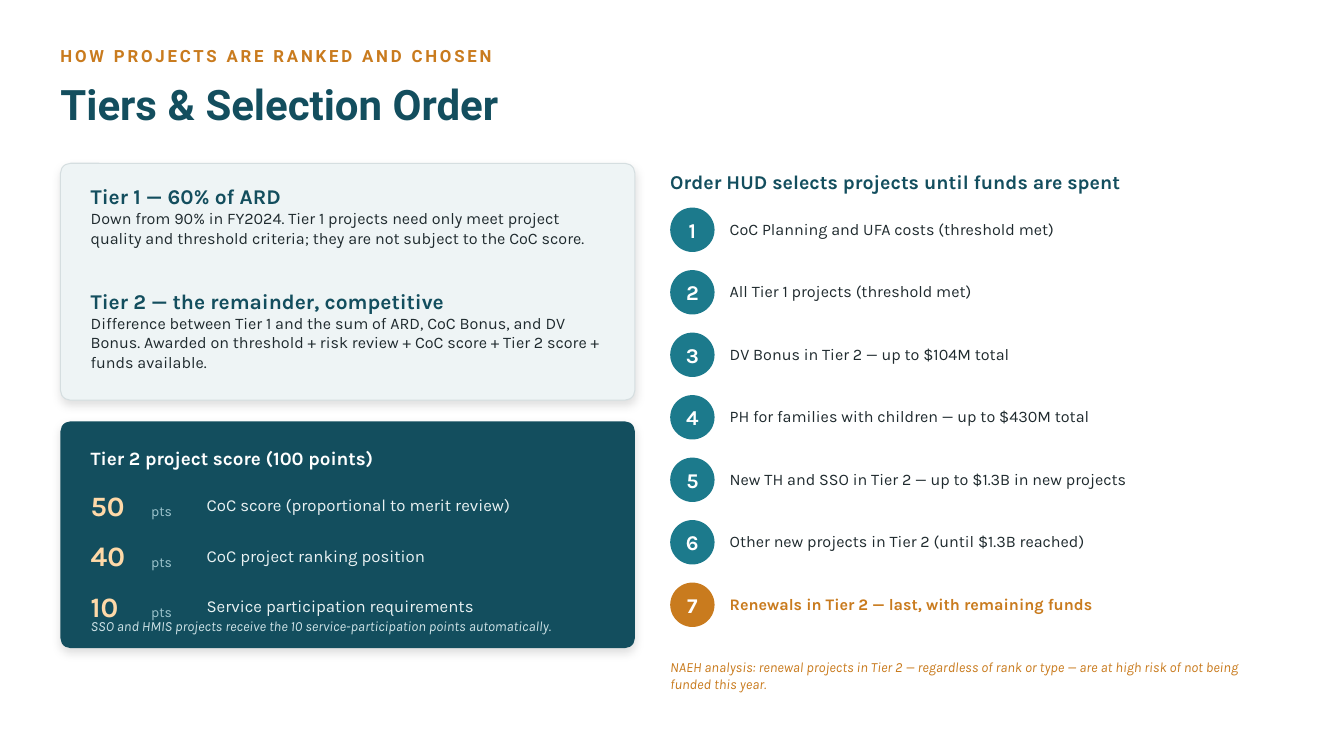
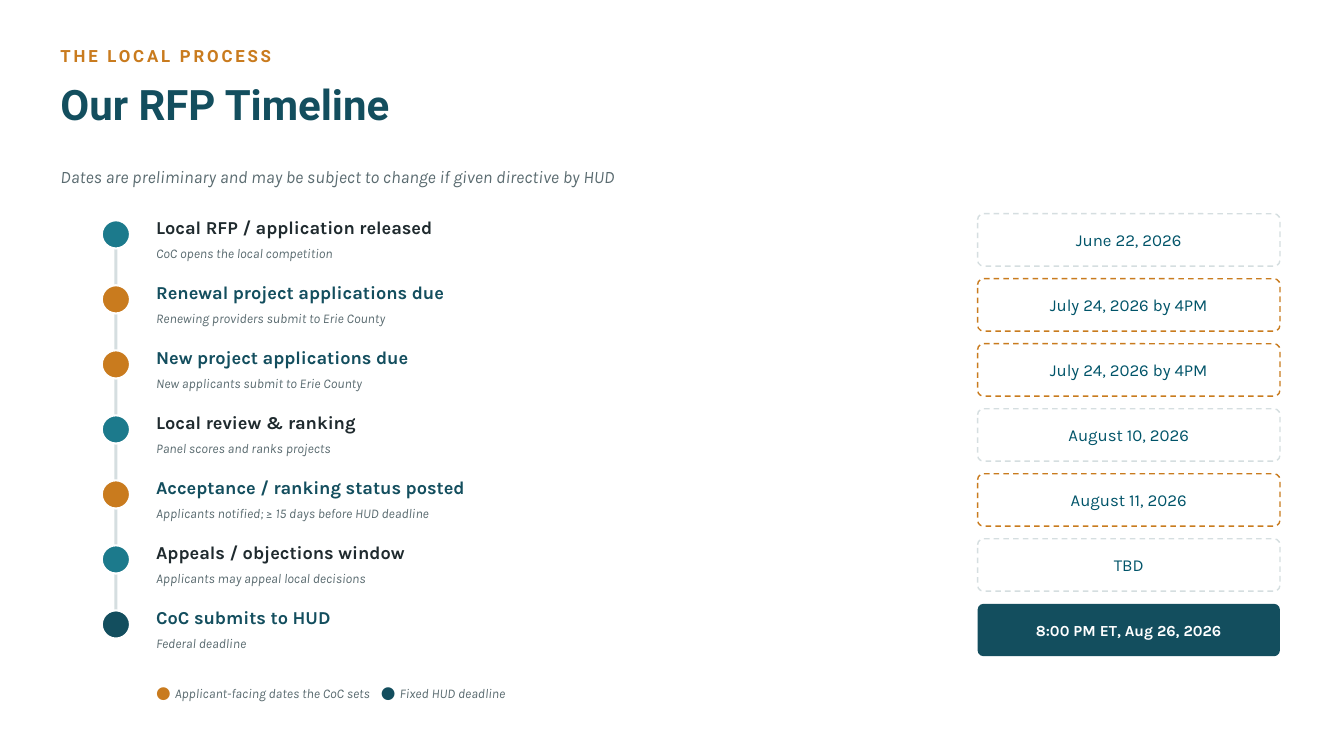
from dataclasses import dataclass, replace
from typing import NamedTuple, Optional

import lxml.etree
import pptx
import pptx.dml.color
import pptx.enum.dml
import pptx.enum.shapes
import pptx.enum.text
import pptx.oxml.ns
import pptx.util

EMU_PER_PX = 4572  # 200 px to the inch
SHAPE = pptx.enum.shapes.MSO_SHAPE
ANCHOR = pptx.enum.text.MSO_ANCHOR
ALIGN = pptx.enum.text.PP_ALIGN
qn = pptx.oxml.ns.qn


@dataclass(frozen=True)
class Theme:
    heading_font: str = "Roboto"
    body_font: str = "Karla"
    white: str = "FFFFFF"
    deep: str = "134E5E"
    teal: str = "1C7A8C"
    amber: str = "C97B1E"
    ink: str = "1F2A2E"
    muted: str = "5A6B70"
    pale: str = "EEF4F5"
    rule: str = "D5DEE0"
    date: str = "005469"
    score_points: str = "FFD9A8"
    score_unit: str = "9FC6CF"
    score_label: str = "EAF2F3"
    score_note: str = "CFE3E7"
    title_size: float = 30
    points_size: float = 20
    tier_size: float = 15
    list_heading_size: float = 14
    score_heading_size: float = 13.5
    milestone_size: float = 13
    intro_size: float = 12.5
    label_size: float = 12
    body_size: float = 11.5
    deadline_size: float = 11
    note_size: float = 10
    caption_size: float = 9.5


T = Theme()


@dataclass(frozen=True)
class TextStyle:
    size: float
    color: str
    bold: bool = False
    italic: bool = False
    font: str = T.body_font
    tracking: int = 0  # hundredths of a point


EYEBROW = TextStyle(T.label_size, T.amber, bold=True, font=T.heading_font, tracking=200)
TITLE = TextStyle(T.title_size, T.deep, bold=True, font=T.heading_font)
TIER = TextStyle(T.tier_size, T.deep, bold=True)
BODY = TextStyle(T.body_size, T.ink)
BADGE = TextStyle(T.tier_size, T.white, bold=True)
CAPTION = TextStyle(T.caption_size, T.muted, italic=True)
DATE = TextStyle(T.label_size, T.date)


class Box(NamedTuple):
    x: int
    y: int
    w: int
    h: int

    def down(self, distance: int) -> "Box":
        return self._replace(y=self.y + distance)


class Line(NamedTuple):
    text: str
    style: TextStyle


class Score(NamedTuple):
    points: str
    label: str


@dataclass(frozen=True)
class Outline:
    color: str
    width: float
    dashed: bool = False


@dataclass(frozen=True)
class MilestoneKind:
    dot: str
    title: str
    date_fill: str
    date_outline: Optional[Outline]
    date_style: TextStyle


ROUTINE = MilestoneKind(T.teal, T.ink, T.white, Outline(T.rule, 1, True), DATE)
APPLICANT = MilestoneKind(T.amber, T.deep, T.white, Outline(T.amber, 1, True), DATE)
FEDERAL = MilestoneKind(
    T.deep, T.deep, T.deep, None, TextStyle(T.deadline_size, T.white, bold=True)
)


class Milestone(NamedTuple):
    title: str
    caption: str
    date: str
    kind: MilestoneKind


TIERS = [
    (Box(180, 364, 1020, 190), "Tier 1 — 60% of ARD",
     "Down from 90% in FY2024. Tier 1 projects need only meet project quality and "
     "threshold criteria; they are not subject to the CoC score."),
    (Box(180, 572, 1020, 200), "Tier 2 — the remainder, competitive",
     "Difference between Tier 1 and the sum of ARD, CoC Bonus, and DV Bonus. Awarded on "
     "threshold + risk review + CoC score + Tier 2 score + funds available."),
]
SCORES = [
    Score("50", "CoC score (proportional to merit review)"),
    Score("40", "CoC project ranking position"),
    Score("10", "Service participation requirements"),
]
SELECTION_ORDER = [
    "CoC Planning and UFA costs (threshold met)",
    "All Tier 1 projects (threshold met)",
    "DV Bonus in Tier 2 — up to $104M total",
    "PH for families with children — up to $430M total",
    "New TH and SSO in Tier 2 — up to $1.3B in new projects",
    "Other new projects in Tier 2 (until $1.3B reached)",
    "Renewals in Tier 2 — last, with remaining funds",
]
MILESTONES = [
    Milestone("Local RFP / application released", "CoC opens the local competition",
              "June 22, 2026", ROUTINE),
    Milestone("Renewal project applications due", "Renewing providers submit to Erie County",
              "July 24, 2026 by 4PM", APPLICANT),
    Milestone("New project applications due", "New applicants submit to Erie County",
              "July 24, 2026 by 4PM", APPLICANT),
    Milestone("Local review & ranking", "Panel scores and ranks projects",
              "August 10, 2026", ROUTINE),
    Milestone("Acceptance / ranking status posted",
              "Applicants notified; ≥ 15 days before HUD deadline",
              "August 11, 2026", APPLICANT),
    Milestone("Appeals / objections window", "Applicants may appeal local decisions",
              "TBD", ROUTINE),
    Milestone("CoC submits to HUD", "Federal deadline", "8:00 PM ET, Aug 26, 2026", FEDERAL),
]


def px(length: int) -> pptx.util.Emu:
    return pptx.util.Emu(length * EMU_PER_PX)


def rgb(color: str) -> pptx.dml.color.RGBColor:
    return pptx.dml.color.RGBColor.from_string(color)


def set_font(font, style: TextStyle) -> None:
    font.name = style.font
    font.size = pptx.util.Pt(style.size)
    font.bold = style.bold
    font.italic = style.italic
    font.color.rgb = rgb(style.color)


def write(sp, lines: list[Line], align=ALIGN.LEFT, anchor=ANCHOR.MIDDLE,
          spacing: Optional[float] = None):
    """Fill a shape with one paragraph per line, without margins."""
    tf = sp.text_frame
    tf.word_wrap = True
    tf.vertical_anchor = anchor
    tf.margin_left = tf.margin_right = tf.margin_top = tf.margin_bottom = 0
    for i, line in enumerate(lines):
        p = tf.add_paragraph() if i else tf.paragraphs[0]
        p.alignment = align
        if spacing:
            p.line_spacing = spacing
        r = p.add_run()
        r.text = line.text
        set_font(p.font, line.style)
        if line.style.tracking:
            r.font._element.set("spc", str(line.style.tracking))


def add_text(s, box: Box, text: str, style: TextStyle,
             spacing: Optional[float] = None) -> None:
    write(s.shapes.add_textbox(*map(px, box)), [Line(text, style)], spacing=spacing)


def add_shape(s, kind, box: Box, fill: str, outline: Optional[Outline] = None,
              radius: Optional[float] = None):
    sp = s.shapes.add_shape(kind, *map(px, box))
    sp.shadow.inherit = False
    sp.fill.solid()
    sp.fill.fore_color.rgb = rgb(fill)
    if radius is not None:
        sp.adjustments[0] = radius
    if outline is None:
        sp.line.fill.background()
    else:
        sp.line.color.rgb = rgb(outline.color)
        sp.line.width = pptx.util.Pt(outline.width)
        if outline.dashed:
            sp.line.dash_style = pptx.enum.dml.MSO_LINE.DASH
    return sp


def add_card(s, box: Box, fill: str, outline: Optional[Outline] = None) -> None:
    """Draw a rounded panel with a soft shadow below it."""
    sp = add_shape(s, SHAPE.ROUNDED_RECTANGLE, box, fill, outline, radius=20 / box.h)
    effects = sp._element.spPr.find(qn("a:effectLst"))
    shadow = lxml.etree.SubElement(
        effects, qn("a:outerShdw"), blurRad=str(pptx.util.Pt(7)),
        dist=str(pptx.util.Pt(3)), dir="5400000", algn="bl", rotWithShape="0")
    color = lxml.etree.SubElement(shadow, qn("a:srgbClr"), val="000000")
    lxml.etree.SubElement(color, qn("a:alpha"), val="12000")


def add_titled_slide(prs, eyebrow: str, title: str):
    s = prs.slides.add_slide(prs.slide_layouts[6])
    add_text(s, Box(120, 80, 2420, 60), eyebrow, EYEBROW)
    add_text(s, Box(120, 140, 2420, 132), title, TITLE)
    return s


def add_score(s, score: Score, y: int) -> None:
    add_text(s, Box(180, y, 160, 84), score.points,
             TextStyle(T.points_size, T.score_points, bold=True))
    add_text(s, Box(300, y + 24, 100, 60), "pts", TextStyle(T.note_size, T.score_unit))
    add_text(s, Box(410, y, 800, 84), score.label, TextStyle(T.label_size, T.score_label))


def add_step(s, number: int, text: str, y: int, last: bool) -> None:
    badge = add_shape(s, SHAPE.OVAL, Box(1330, y, 88, 88), T.amber if last else T.teal)
    write(badge, [Line(str(number), BADGE)], ALIGN.CENTER)
    style = replace(BODY, color=T.amber, bold=True) if last else BODY
    add_text(s, Box(1448, y - 4, 1092, 96), text, style, spacing=0.95)


def add_milestone(s, milestone: Milestone, offset: int) -> None:
    kind = milestone.kind
    add_shape(s, SHAPE.OVAL, Box(202, 437, 56, 56).down(offset), kind.dot,
              Outline(T.white, 1.5))
    add_text(s, Box(310, 418, 1480, 64).down(offset), milestone.title,
             TextStyle(T.milestone_size, kind.title, bold=True))
    add_text(s, Box(310, 474, 1580, 56).down(offset), milestone.caption, CAPTION)
    pill = add_shape(s, SHAPE.ROUNDED_RECTANGLE, Box(1940, 424, 600, 104).down(offset),
                     kind.date_fill, kind.date_outline, radius=0.115)
    write(pill, [Line(milestone.date, kind.date_style)], ALIGN.CENTER)


def add_legend(s) -> None:
    """Put both legend entries on one line, the second at a tab stop."""
    sp = s.shapes.add_textbox(*map(px, Box(310, 1342, 1800, 60)))
    write(sp, [])
    p = sp.text_frame.paragraphs[0]
    tabs = lxml.etree.SubElement(p._p.get_or_add_pPr(), qn("a:tabLst"))
    lxml.etree.SubElement(tabs, qn("a:tab"), pos=str(px(446)), algn="l")
    for text, style in (
        ("● ", TextStyle(T.label_size, T.amber)),
        ("Applicant-facing dates the CoC sets\t", CAPTION),
        ("● ", TextStyle(T.label_size, T.deep)),
        ("Fixed HUD deadline", CAPTION),
    ):
        r = p.add_run()
        r.text = text
        set_font(r.font, style)


def build_tiers(prs) -> None:
    s = add_titled_slide(prs, "HOW PROJECTS ARE RANKED AND CHOSEN", "Tiers & Selection Order")
    add_card(s, Box(120, 324, 1140, 470), T.pale, Outline(T.rule, 0.75))
    for box, heading, body in TIERS:
        write(s.shapes.add_textbox(*map(px, box)),
              [Line(heading, TIER), Line(body, BODY)], anchor=ANCHOR.TOP)

    add_card(s, Box(120, 836, 1140, 450), T.deep)
    add_text(s, Box(180, 872, 1040, 72), "Tier 2 project score (100 points)",
             TextStyle(T.score_heading_size, T.white, bold=True))
    for i, score in enumerate(SCORES):
        add_score(s, score, 960 + 100 * i)
    add_text(s, Box(180, 1208, 1040, 68),
             "SSO and HMIS projects receive the 10 service-participation points automatically.",
             TextStyle(T.note_size, T.score_note, italic=True))

    add_text(s, Box(1330, 324, 1210, 72), "Order HUD selects projects until funds are spent",
             TextStyle(T.list_heading_size, T.deep, bold=True))
    for i, text in enumerate(SELECTION_ORDER):
        add_step(s, i + 1, text, 412 + 124 * i, last=i == len(SELECTION_ORDER) - 1)
    add_text(s, Box(1330, 1300, 1210, 80),
             "NAEH analysis: renewal projects in Tier 2 — regardless of rank or type — "
             "are at high risk of not being funded this year.",
             TextStyle(T.note_size, T.amber, italic=True))


def build_timeline(prs) -> None:
    s = add_titled_slide(prs, "THE LOCAL PROCESS", "Our RFP Timeline")
    add_text(s, Box(120, 310, 2420, 80),
             "Dates are preliminary and may be subject to change if given directive by HUD",
             TextStyle(T.intro_size, T.muted, italic=True))
    pitch = 129
    add_shape(s, SHAPE.RECTANGLE, Box(227, 465, 6, pitch * (len(MILESTONES) - 1)), T.rule)
    for i, milestone in enumerate(MILESTONES):
        add_milestone(s, milestone, pitch * i)
    add_legend(s)


def main() -> None:
    prs = pptx.Presentation()
    prs.slide_width, prs.slide_height = px(2667), px(1500)
    build_tiers(prs)
    build_timeline(prs)
    prs.save("out.pptx")


if __name__ == "__main__":
    main()
